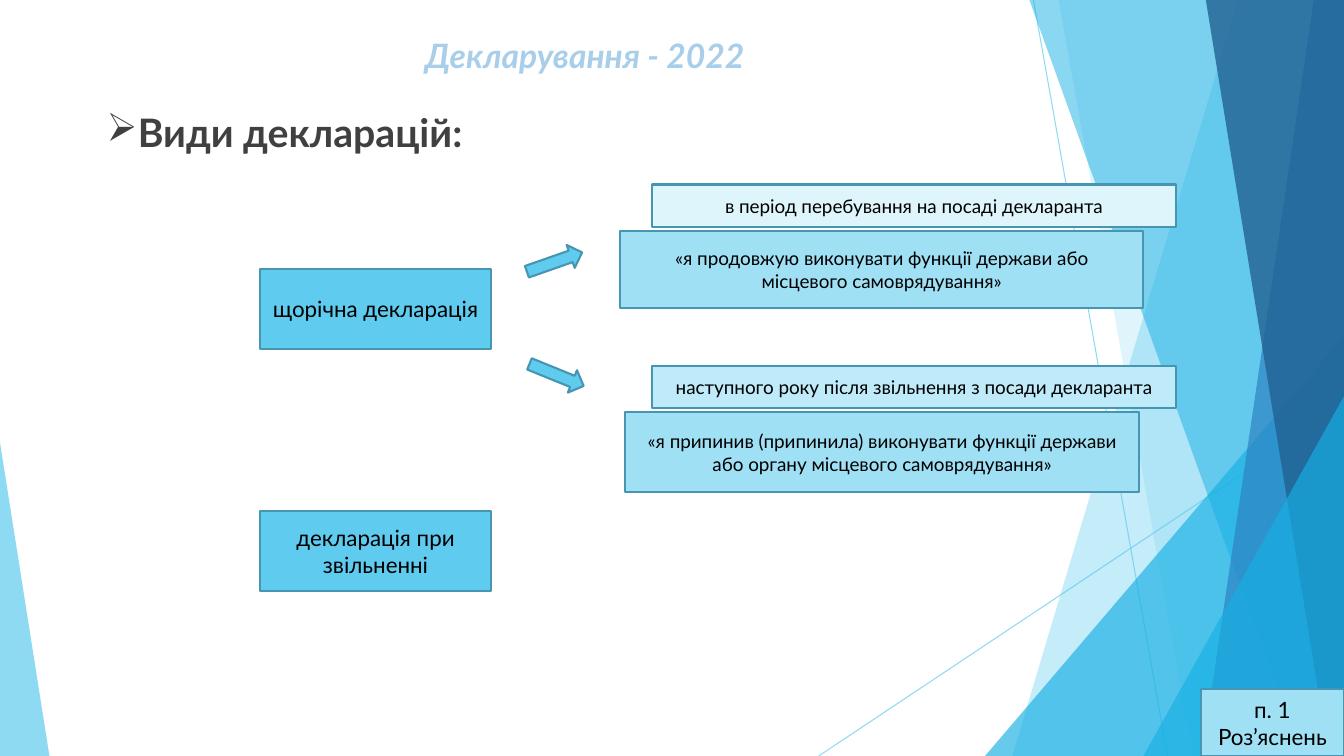
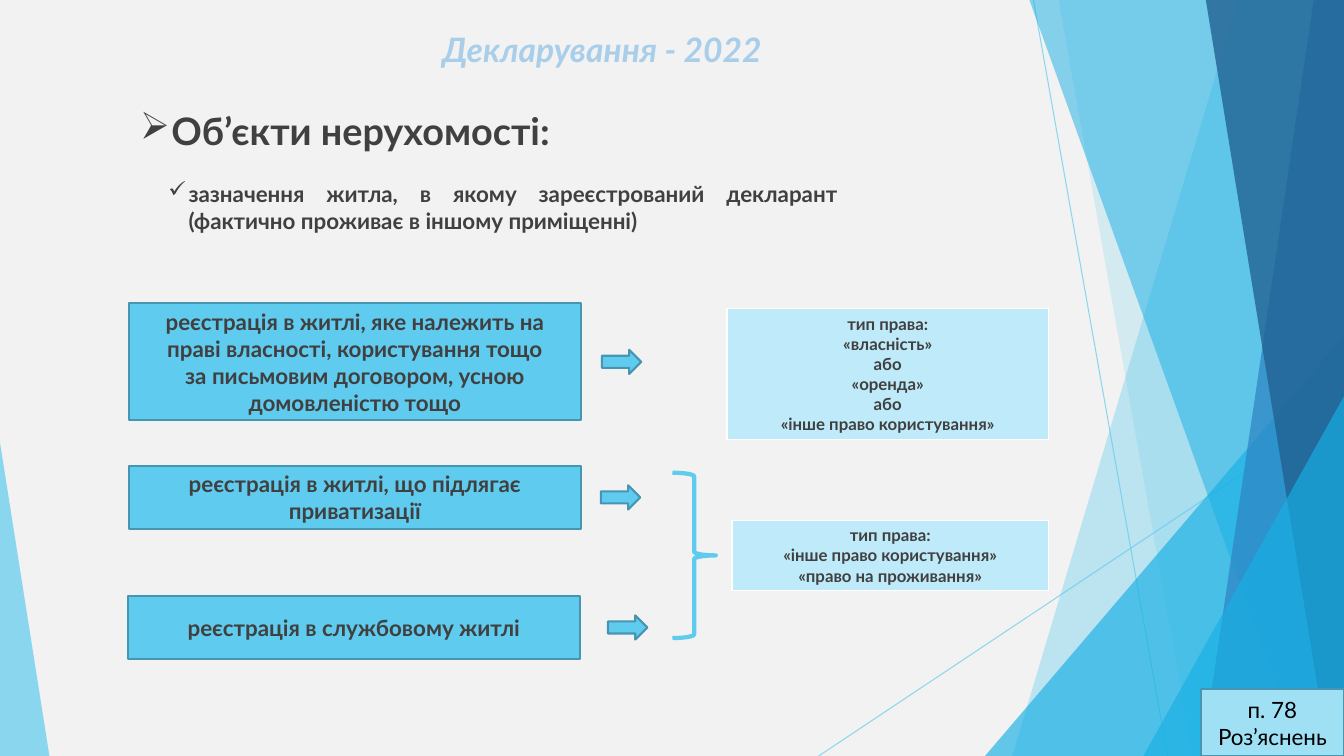
from lxml import etree
from pptx import Presentation
from pptx import util as u
from pptx.dml.color import RGBColor
from pptx.enum import shapes, text
from pptx.oxml.ns import qn

FONT = "Lato"
WIDE, HIGH = 13.33, 7.5
HUE = {
    "white": "FFFFFF", "gray": "F2F2F2", "black": "000000", "ink": "404040",
    "title": "A8CEEA", "sky": "5FCBEF", "cyan": "17B0E4", "blue": "2E83C3",
    "navy": "226292", "edge": "4696B1", "pale": "DFF5FC", "light": "BFEAF9",
    "soft": "9FE0F5",
}
KIND = shapes.MSO_SHAPE
ALIGN = text.PP_ALIGN


def rgb(name):
    return RGBColor.from_string(HUE[name])


def inch(*nums):
    return [u.Inches(n) for n in nums]


def fade(item, part):
    """Set the opacity, in percent, of the only colour in a shape's properties."""
    tone = item._element.spPr.find(".//" + qn("a:srgbClr"))
    etree.SubElement(tone, qn("a:alpha"), val=str(part * 1000))


def write(frame, lines, size=16, hue="black", bold=False, ital=False,
          align=ALIGN.CENTER, anchor=text.MSO_ANCHOR.MIDDLE):
    """Fill a text frame with one paragraph for each line."""
    frame.word_wrap = True
    frame.vertical_anchor = anchor
    for n, line in enumerate(lines):
        para = frame.paragraphs[0] if n == 0 else frame.add_paragraph()
        para.alignment = align
        run = para.add_run()
        run.text = line
        font = run.font
        font.name, font.size = FONT, u.Pt(size)
        font.bold, font.italic = bold, ital
        font.color.rgb = rgb(hue)
    return frame


def label(slide, box, lines, **form):
    """Add a plain text box, anchored at its top."""
    frame = slide.shapes.add_textbox(*inch(*box)).text_frame
    return write(frame, lines, anchor=text.MSO_ANCHOR.TOP, **form)


def bullet(para, mark, left, hang):
    props = para._p.get_or_add_pPr()
    props.set("marL", str(u.Inches(left)))
    props.set("indent", str(-u.Inches(hang)))
    etree.SubElement(props, qn("a:buChar"), char=mark)


def shape(slide, box, kind=KIND.RECTANGLE, fill="sky", line="edge",
          width=1.5, turn=0):
    item = slide.shapes.add_shape(kind, *inch(*box))
    item.shadow.inherit = False
    item.rotation = turn
    paint(item, fill)
    if line:
        item.line.color.rgb = rgb(line)
        item.line.width = u.Pt(width)
    else:
        item.line.fill.background()
    return item


def paint(item, fill):
    if fill:
        item.fill.solid()
        item.fill.fore_color.rgb = rgb(fill)
    else:
        item.fill.background()


def panel(slide, box, lines, fill="sky", **form):
    write(shape(slide, box, fill=fill).text_frame, lines, **form)


def arrow(slide, x, y, wide=0.39, turn=0):
    shape(slide, (x, y, wide, 0.24), KIND.RIGHT_ARROW, turn=turn)


# Shared backdrop
def ray(slide, x1, y1, x2, y2):
    line = slide.shapes.add_connector(
        shapes.MSO_CONNECTOR.STRAIGHT, *inch(x1, y1, x2, y2))
    line.line.color.rgb = rgb("sky")
    line.line.width = u.Pt(0.75)
    fade(line, 70)
    etree.SubElement(line._element.spPr, qn("a:effectLst"))


def band(slide, top, foot, fill, part):
    """Fill from a slanted edge to the right side of the slide."""
    path = slide.shapes.build_freeform(*inch(top, 0))
    path.add_line_segments([inch(WIDE, 0), inch(WIDE, HIGH), inch(foot, HIGH)])
    item = path.convert_to_shape()
    item.shadow.inherit = False
    paint(item, fill)
    item.line.fill.background()
    fade(item, part)


def wedge(slide, x, y, wide, tip, fill, part):
    """Stand a triangle on the lower edge of the slide."""
    item = shape(slide, (x, y, wide, HIGH - y), KIND.ISOSCELES_TRIANGLE,
                 fill=fill, line=None)
    item.adjustments[0] = tip
    fade(item, part)


def base(deck, back, title, spot, note):
    """Start a slide with its backdrop, title and corner note."""
    slide = deck.slides.add_slide(deck.slide_layouts[6])
    slide.background.fill.solid()
    slide.background.fill.fore_color.rgb = rgb(back)
    ray(slide, 10.25, 0, 11.58, HIGH)
    ray(slide, WIDE, 4.03, 8.12, HIGH)
    band(slide, 12.28, 10.04, "sky", 36)
    band(slide, 10.5, 11.83, "sky", 20)
    wedge(slide, 9.77, 3.33, 3.56, 1, "cyan", 66)
    band(slide, 10.21, 12.91, "cyan", 50)
    band(slide, 13.03, 11.92, "blue", 70)
    band(slide, 11.96, 13.18, "navy", 80)
    wedge(slide, 11.34, 3.93, 1.99, 1, "cyan", 66)
    wedge(slide, 0, 4.39, 0.49, 0, "sky", 70)
    label(slide, (*spot, 7.22, 0.5), [title], size=24, hue="title",
          bold=True, ital=True)
    panel(slide, (11.91, 6.84, 1.42, 0.66), [note], fill="soft")
    return slide


# Slide 1: kinds of declaration
def branch(slide, box, fill, head, quote, step):
    """Place a heading at the right of the box and its quote at the left."""
    x, y, wide, high = box
    right, drop = 5.19, 0.46
    panel(slide, (x + wide - right, y, right, 0.42), [head], fill=fill,
          size=13.5)
    panel(slide, (x, y + drop, wide - step, high - drop), [quote],
          fill="soft", size=13.5)


def kinds(deck, title):
    slide = base(deck, "white", title, (2.19, 0.3), "п. 1 Роз’яснень")
    head = label(slide, (0.96, 1.03, 7.84, 0.6), ["Види декларацій:"],
                 size=28, hue="ink", bold=True, align=ALIGN.LEFT)
    bullet(head.paragraphs[0], "➢", 0.28, 0.28)
    for y, name in ((2.67, "щорічна декларація"),
                    (5.07, "декларація при звільненні")):
        panel(slide, (2.58, y, 2.29, 0.79), [name])
    branch(slide, (6.15, 1.83, 5.51, 1.23), "pale",
           "в період перебування на посаді декларанта",
           "«я продовжую виконувати функції держави або місцевого "
           "самоврядування»", 0.32)
    branch(slide, (6.2, 3.63, 5.46, 1.25), "light",
           "наступного року після звільнення з посади декларанта",
           "«я припинив (припинила) виконувати функції держави або органу "
           "місцевого самоврядування»", 0.36)
    arrow(slide, 5.21, 2.48, 0.58, 340.7)
    arrow(slide, 5.23, 3.6, 0.58, 22.1)


# Slide 2: real estate
def rights(slide, box, lines):
    """Add a one-cell table that lists types of right."""
    table = slide.shapes.add_table(1, 1, *inch(*box)).table
    table.first_row = table.horz_banding = False
    cell = table.cell(0, 0)
    paint(cell, "light")
    write(cell.text_frame, lines, size=12, hue="ink", bold=True,
          anchor=text.MSO_ANCHOR.TOP)


def case(slide, box, lines, gap):
    """Place a case and, level with its middle, an arrow to its right."""
    x, y, wide, high = box
    panel(slide, box, lines, hue="ink", bold=True)
    arrow(slide, x + wide + gap, y + high / 2 - 0.12)


def estate(deck, title):
    slide = base(deck, "gray", title, (2.36, 0.24), "п. 78 Роз’яснень")
    frame = label(slide, (0.82, 1.03, 7.56, 1.4), [
        "Об’єкти нерухомості:",
        "зазначення житла, в якому зареєстрований декларант "
        "(фактично проживає в іншому приміщенні)",
    ], hue="ink", bold=True, align=ALIGN.JUSTIFY)
    frame.margin_left = frame.margin_right = u.Inches(0.07)
    frame.margin_top = frame.margin_bottom = u.Inches(0.04)
    head, item = frame.paragraphs
    head.alignment = ALIGN.LEFT
    head.runs[0].font.size = u.Pt(27)
    item.space_before = u.Pt(19)
    bullet(head, "➢", 0.81, 0.31)
    bullet(item, "✓", 0.98, 0.2)

    case(slide, (1.28, 3.01, 4.48, 1.16), [
        "реєстрація в житлі, яке належить на праві власності, "
        "користування тощо",
        "за письмовим договором, усною домовленістю тощо"], 0.21)
    case(slide, (1.28, 4.62, 4.48, 0.63),
         ["реєстрація в житлі, що підлягає приватизації"], 0.2)
    case(slide, (1.27, 5.91, 4.48, 0.63),
         ["реєстрація в службовому житлі"], 0.28)

    kind, other = "тип права:", "«інше право користування»"
    rights(slide, (7.21, 3.06, 3.19, 1.3),
           [kind, "«власність»", "або", "«оренда»", "або", other])
    rights(slide, (7.26, 5.16, 3.14, 0.7),
           [kind, other, "«право на проживання»"])
    shape(slide, (6.67, 4.69, 0.43, 1.64), KIND.RIGHT_BRACE, fill=None,
          line="sky", width=3)


def main():
    deck = Presentation()
    deck.slide_width, deck.slide_height = inch(WIDE, HIGH)
    title = "Декларування - 2022"
    kinds(deck, title)
    estate(deck, title)
    deck.save("out.pptx")


if __name__ == "__main__":
    main()
